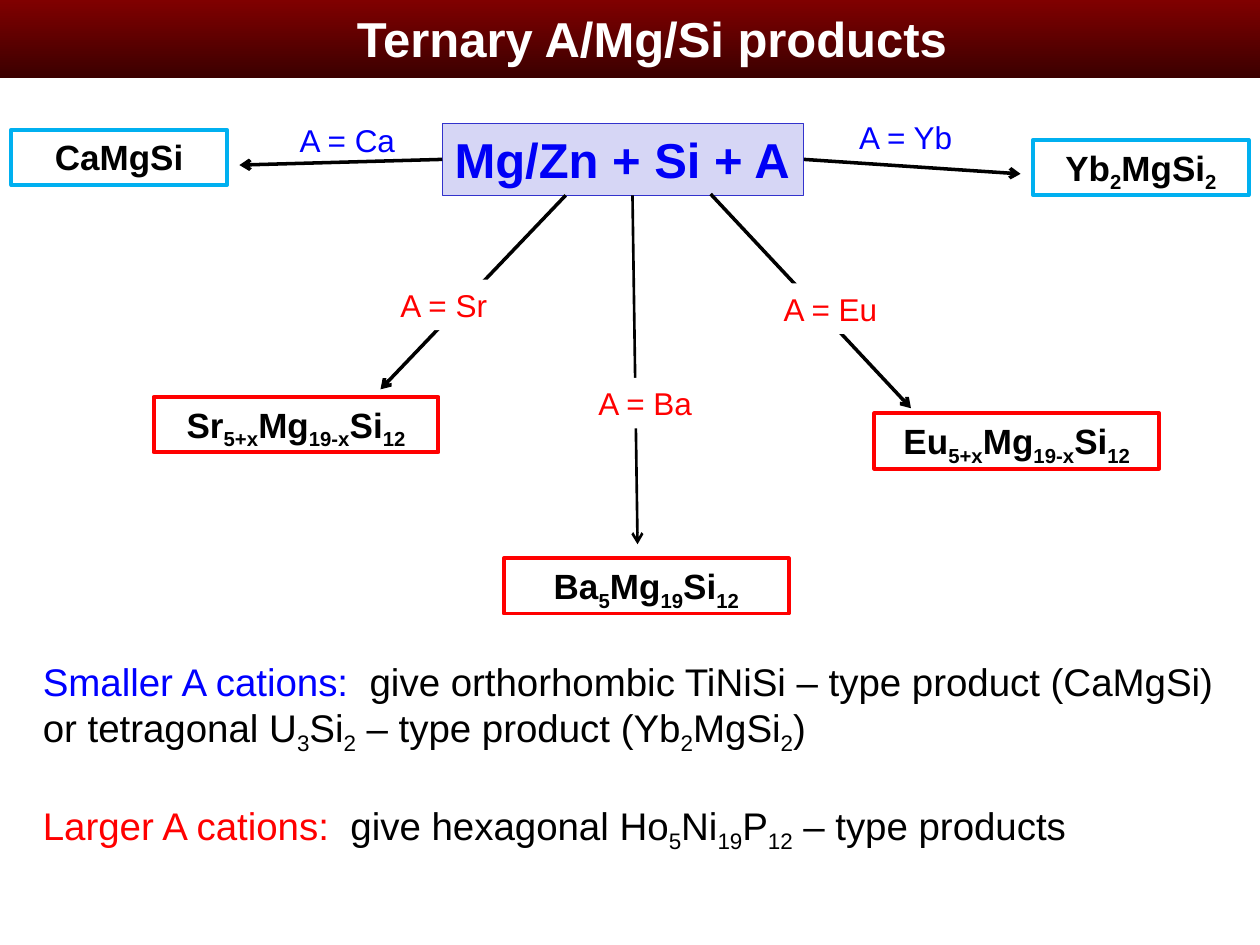
from lxml import etree
from pptx import Presentation
from pptx.dml.color import RGBColor
from pptx.enum import shapes, text
from pptx.oxml.ns import qn
from pptx.util import Inches, Pt

COLORS = {
    "bar_top": "800000", "bar_bottom": "3B0000", "white": "FFFFFF", "black": "000000",
    "start_fill": "D6D6F5", "start_line": "3333CC", "start_text": "0000F6",
    "blue": "0000FF", "red": "FF0000", "cyan": "00B0F0",
}
TITLE = "Ternary A/Mg/Si products"
START = ("Mg/Zn + Si + A", (3.51, 0.98, 2.87, 0.57))

# Braces mark subscripts. Each product: formula, box left/top/width, cation,
# label left/top/width, arrow start, arrow end, arrow weight, glued side of the start box
SMALLER = [
    ("CaMgSi", (0.09, 1.03, 1.71), "Ca", (2.28, 0.91, 1.21), (3.48, 1.25), (1.9, 1.31), 2, 1),
    ("Yb{2}MgSi{2}", (8.2, 1.11, 1.71), "Yb", (6.72, 0.89, 1.18), (6.39, 1.29), (8.1, 1.38), 2, 3),
]
LARGER = [
    ("Sr{5+x}Mg{19-x}Si{12}", (1.22, 3.15, 2.26), "Sr", (3.08, 2.22, 1.39),
     (4.49, 1.55), (3.02, 3.09), 2, None),
    ("Ba{5}Mg{19}Si{12}", (4, 4.43, 2.26), "Ba", (4.65, 3, 1.29),
     (5.02, 1.55), (5.06, 4.32), 1.5, None),
    ("Eu{5+x}Mg{19-x}Si{12}", (6.94, 3.28, 2.26), "Eu", (6.12, 2.25, 1.19),
     (5.64, 1.54), (7.23, 3.24), 2, None),
]
SUMMARY = [
    ("Smaller A cations:  ", "blue", "give orthorhombic TiNiSi – type product (CaMgSi) or "
     "tetragonal U{3}Si{2} – type product (Yb{2}MgSi{2})"),
    ("Larger A cations:  ", "red", "give hexagonal Ho{5}Ni{19}P{12} – type products"),
]
BOX_H, LABEL_H = 0.44, 0.4


def rgb(name):
    return RGBColor.from_string(COLORS[name])


def place(sp, left, top, width, height):
    sp.left, sp.top, sp.width, sp.height = map(Inches, (left, top, width, height))


def add_runs(p, formula, size, color, bold=False):
    """Add text to a paragraph, lowering the parts in braces."""
    for i, part in enumerate(formula.replace("}", "{").split("{")):
        if not part:
            continue
        r = p.add_run()
        r.text = part
        r.font.name, r.font.size, r.font.bold = "Arial", Pt(size), bold
        r.font.color.rgb = rgb(color)
        if i % 2:
            r._r.get_or_add_rPr().set("baseline", "-25000")


def add_box(s, formula, at, size, color, bold=False, fill=None, line=None, weight=2.25,
            align=text.PP_ALIGN.LEFT):
    sp = s.shapes.add_shape(shapes.MSO_SHAPE.RECTANGLE, *map(Inches, at))
    sp.shadow.inherit = False
    if fill:
        sp.fill.solid()
        sp.fill.fore_color.rgb = rgb(fill)
    else:
        sp.fill.background()
    if line:
        sp.line.color.rgb = rgb(line)
        sp.line.width = Pt(weight)
    else:
        sp.line.fill.background()
    tf = sp.text_frame
    tf.word_wrap = False
    tf.vertical_anchor = text.MSO_ANCHOR.TOP
    tf.paragraphs[0].alignment = align
    add_runs(tf.paragraphs[0], formula, size, color, bold)
    return sp


def add_arrow(s, start, end, weight, box, side):
    cx = s.shapes.add_connector(shapes.MSO_CONNECTOR.STRAIGHT, *map(Inches, start + end))
    if side is not None:
        cx.begin_connect(box, side)
    cx.line.color.rgb = rgb("black")
    cx.line.width = Pt(weight)
    etree.SubElement(cx.line._get_or_add_ln(), qn("a:tailEnd"), type="arrow")
    etree.SubElement(cx._element.spPr, qn("a:effectLst"))


def add_labels(s, products, color):
    for _, _, cation, at, *_ in products:
        add_box(s, f"A = {cation}", (*at, LABEL_H), 18, color, fill="white")


def add_title(s):
    bar = s.shapes.add_shape(shapes.MSO_SHAPE.RECTANGLE, 0, 0, Inches(10), Inches(0.62))
    bar.shadow.inherit = False
    bar.line.fill.background()
    bar.fill.gradient()
    bar.fill.gradient_angle = 270
    for stop, name, pos in zip(bar.fill.gradient_stops, ("bar_top", "bar_bottom"), (0, 1)):
        stop.color.rgb = rgb(name)
        stop.position = pos
    s.shapes._spTree.insert(2, bar._element)  # behind the title

    title = s.shapes.title
    place(title, 0.24, 0.02, 9.76, 0.57)
    tf = title.text_frame
    tf.auto_size = text.MSO_AUTO_SIZE.NONE
    tf.vertical_anchor = text.MSO_ANCHOR.TOP
    p = tf.paragraphs[0]
    p.alignment = text.PP_ALIGN.CENTER
    add_runs(p, " " + TITLE, 28, "white", True)


def add_summary(s):
    body = s.placeholders[1]
    place(body, 0.24, 5.21, 9.53, 1.58)
    tf = body.text_frame
    tf.word_wrap = True
    tf.auto_size = text.MSO_AUTO_SIZE.NONE
    tf.vertical_anchor = text.MSO_ANCHOR.MIDDLE
    for i, (lead, color, rest) in enumerate(SUMMARY):
        p = tf.add_paragraph() if i else tf.paragraphs[0]
        p.space_before = Pt(26 if i else 0)
        pPr = p._p.get_or_add_pPr()
        pPr.set("marL", "0")
        pPr.set("indent", "0")
        etree.SubElement(pPr, qn("a:buNone"))
        add_runs(p, lead, 22, color)
        add_runs(p, rest, 22, "black")


def main():
    prs = Presentation()
    prs.slide_width, prs.slide_height = Inches(10), Inches(7.5)
    s = prs.slides.add_slide(prs.slide_layouts[1])
    add_title(s)
    add_summary(s)
    start = add_box(s, *START, 28, "start_text", True, "start_fill", "start_line", 0.75)
    add_labels(s, SMALLER, "blue")
    for products, line in ((SMALLER, "cyan"), (LARGER, "red")):
        for formula, at, _, _, begin, end, weight, side in products:
            add_box(s, formula, (*at, BOX_H), 20, "black", True, line=line,
                    align=text.PP_ALIGN.CENTER)
            add_arrow(s, begin, end, weight, start, side)
    add_labels(s, LARGER, "red")  # these interrupt their arrows
    prs.save("out.pptx")


if __name__ == "__main__":
    main()
